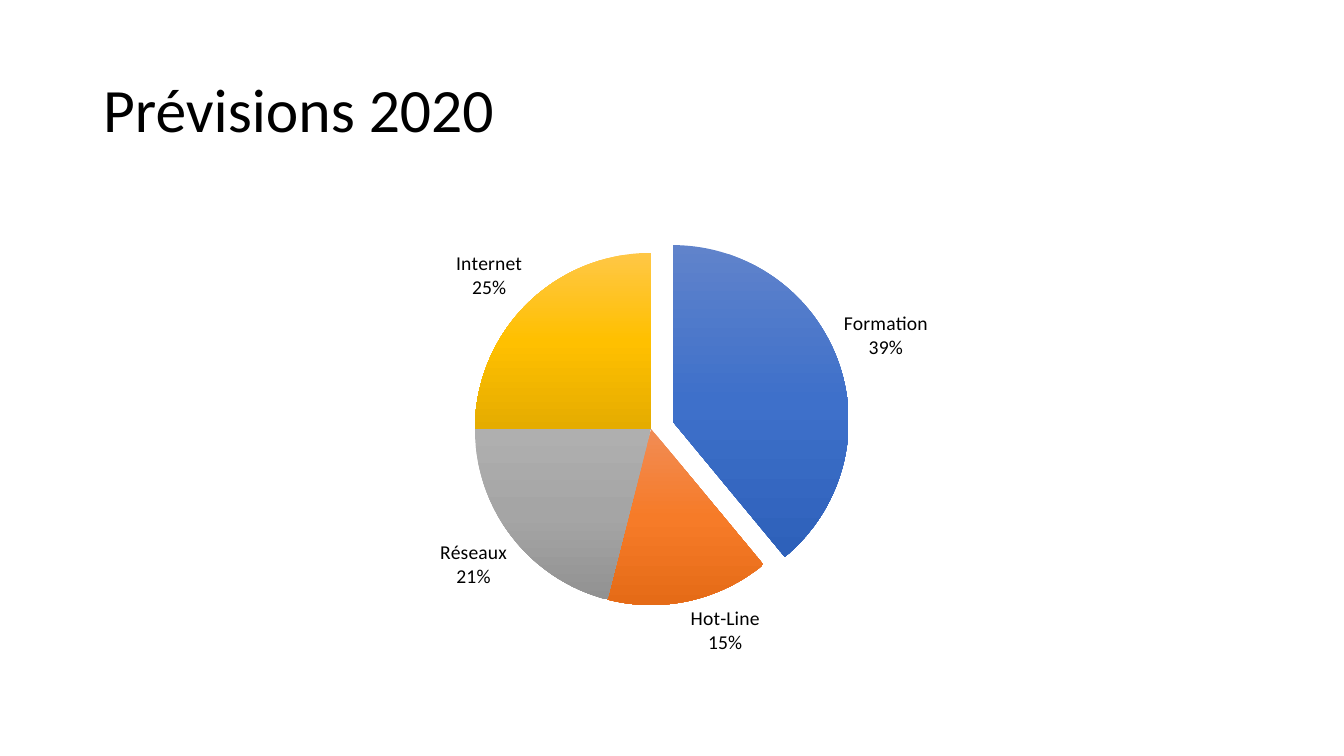
from copy import deepcopy

from lxml.etree import SubElement
from pptx import Presentation
from pptx.chart.data import CategoryChartData
from pptx.dml.color import RGBColor
from pptx.enum.chart import XL_CHART_TYPE as Kind, XL_LABEL_POSITION as Pos
from pptx.enum.text import MSO_ANCHOR as Anchor, PP_ALIGN as Align
from pptx.oxml.ns import qn
from pptx.util import Pt

PX = 12192000 / 1344
FONT = "Calibri"
BLACK = "000000"

# Name, share, then gradient from top to bottom
SLICES = [
    ("Formation", 39, ("6083CB", "3E70CA", "2E61BA")),
    ("Hot-Line", 15, ("F18C55", "F67B28", "E56B17")),
    ("Réseaux", 21, ("AFAFAF", "A5A5A5", "929292")),
    ("Internet", 25, ("FFC746", "FFC000", "E5AC00")),
]


def emu(*px):
    return [round(n * PX) for n in px]


def color(code):
    return RGBColor.from_string(code)


def style(font, size):
    font.name = FONT
    font.size = Pt(size)
    font.color.rgb = color(BLACK)


def add_title(slide, box, text):
    title = slide.shapes.title
    title.left, title.top, title.width, title.height = emu(*box)
    frame = title.text_frame
    frame.text = text
    frame.word_wrap = True
    frame.vertical_anchor = Anchor.MIDDLE
    par = frame.paragraphs[0]
    par.alignment = Align.LEFT
    par.line_spacing = 0.9
    style(par.font, 44)


def shade(point, stops, series, index):
    """Fill one slice with a vertical gradient of three stops."""
    fill = point.format.fill
    fill.gradient()
    fill.gradient_angle = 270
    # A new gradient has two stops, so the last one is doubled
    node = series._element.findall(qn("c:dPt"))[index]
    ends = node.find(".//" + qn("a:gsLst"))
    ends.append(deepcopy(ends[-1]))
    for stop, place, code in zip(fill.gradient_stops, (0, 0.5, 1), stops):
        stop.position = place
        stop.color.rgb = color(code)
    point.format.line.fill.background()
    return node


def add_pie(slide, box):
    data = CategoryChartData()
    data.categories = [name for name, _, _ in SLICES]
    data.add_series("Series 1", [share for _, share, _ in SLICES])
    chart = slide.shapes.add_chart(Kind.PIE, *emu(*box), data).chart
    chart.has_title = False
    chart.has_legend = False
    style(chart.font, 11)
    plot = chart.plots[0]
    plot.vary_by_categories = True
    series = plot.series[0]

    # Slices, the first one pulled out
    for i, (_, _, stops) in enumerate(SLICES):
        node = shade(series.points[i], stops, series, i)
        if i == 0:
            pull = SubElement(node, qn("c:explosion"), val="13")
            node.find(qn("c:spPr")).addprevious(pull)

    # Labels: name above percentage
    labels = series.data_labels
    labels.show_value = False
    labels.show_category_name = True
    labels.show_percentage = True
    labels.position = Pos.OUTSIDE_END
    style(labels.font, 14)
    tree = labels._element
    gap = SubElement(tree, qn("c:separator"))
    gap.text = "\n"
    tree.find(qn("c:showBubbleSize")).addnext(gap)


def main():
    deck = Presentation()
    deck.slide_width, deck.slide_height = emu(1344, 756)
    slide = deck.slides.add_slide(deck.slide_layouts[5])
    add_title(slide, (93, 40, 1159, 146), "Prévisions 2020")
    add_pie(slide, (93, 202, 1159, 480))
    deck.save("out.pptx")


if __name__ == "__main__":
    main()
